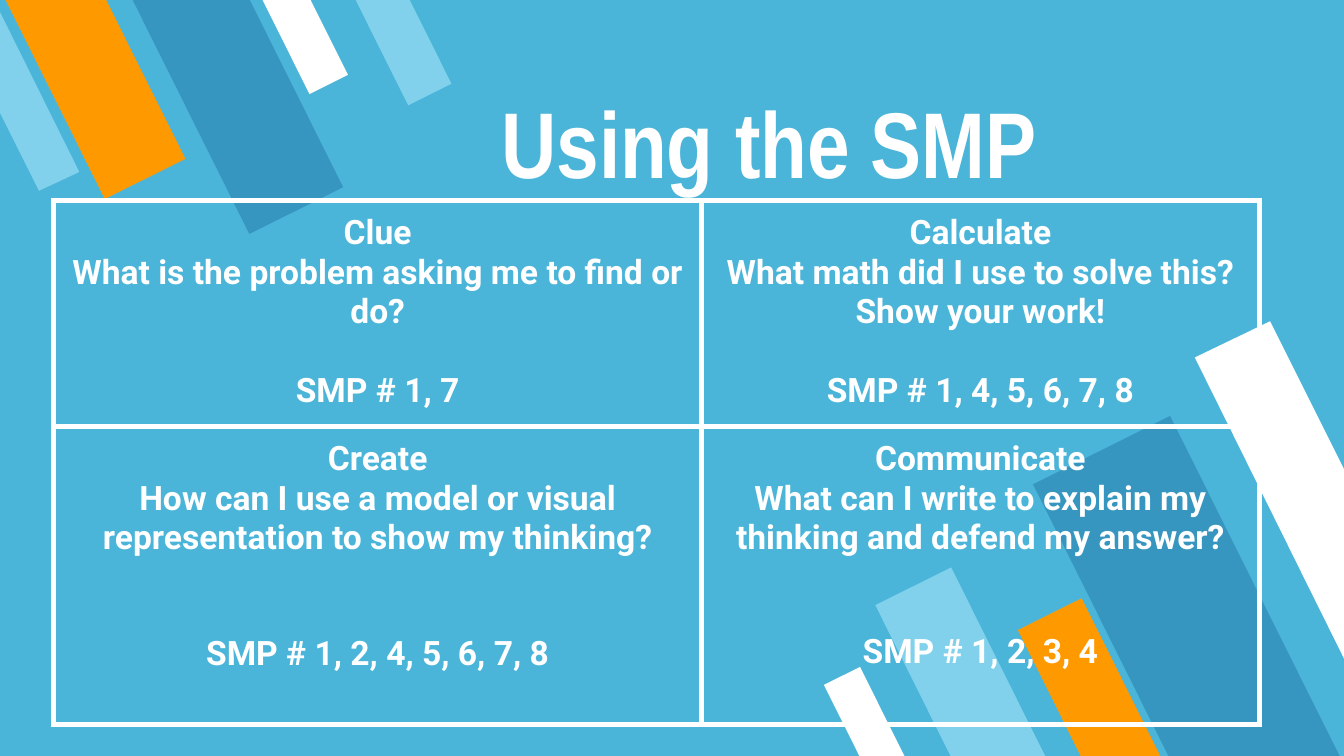
"""Build the "Using the SMP" slide with its four-part problem-solving table."""
from lxml.etree import SubElement
from pptx import Presentation
from pptx.dml.color import RGBColor
from pptx.enum.shapes import MSO_SHAPE
from pptx.enum.text import MSO_ANCHOR, MSO_AUTO_SIZE, PP_ALIGN
from pptx.oxml.ns import qn
from pptx.util import Inches, Pt

COLORS = {"sky": "4BB5D9", "light": "81D1EC", "deep": "3796BF", "orange": "FF9900", "white": "FFFFFF"}


def write(p, text, font="Roboto", size=18, align=PP_ALIGN.CENTER, before=0):
    p.alignment = align
    p.space_before = Pt(before)
    r = p.add_run()
    r.text = text
    r.font.name = font
    r.font.size = Pt(size)
    r.font.bold = True
    r.font.color.rgb = RGBColor.from_string(COLORS["white"])


def paint(sp, color):
    sp.shadow.inherit = False
    sp.fill.solid()
    sp.fill.fore_color.rgb = RGBColor.from_string(COLORS[color])
    sp.line.fill.background()


prs = Presentation()
prs.slide_width = Inches(10)
prs.slide_height = prs.slide_width * 9 // 16
s = prs.slides.add_slide(prs.slide_layouts[5])
s.background.fill.solid()
s.background.fill.fore_color.rgb = RGBColor.from_string(COLORS["sky"])

bars = [
    (6.83, 4.28, 0.63, 1.57, 153.5, "light"),
    (8.26, 3.2, 1.14, 2.84, 153.5, "deep"),
    (7.84, 4.5, 0.53, 1.32, 153.5, "orange"),
    (6.28, 4.99, 0.3, 0.74, 153.5, "white"),
    (2.11, -0.12, 0.32, 0.79, 333.5, "white"),
    (0.37, -0.26, 0.67, 1.68, 333.5, "orange"),
    (1.38, -0.28, 0.78, 1.95, 333.5, "deep"),
    (2.82, -0.14, 0.36, 0.89, 333.5, "light"),
]
for x, y, w, h, angle, color in bars:
    sp = s.shapes.add_shape(MSO_SHAPE.FLOWCHART_MANUAL_INPUT, Inches(x), Inches(y), Inches(w), Inches(h))
    sp.rotation = angle
    sp._element.spPr.find(qn("a:xfrm")).set("flipH", "1")
    paint(sp, color)

edge_bars = [
    ([(9.45, 2.39), (8.89, 2.66), (10, 4.9), (10, 3.49)], "white"),
    ([(0.29, 1.42), (0.59, 1.28), (0, 0.09), (0, 0.84)], "light"),
]
for corners, color in edge_bars:
    points = [(Inches(x), Inches(y)) for x, y in corners]
    outline = s.shapes.build_freeform(*points[0])
    outline.add_line_segments(points[1:])
    paint(outline.convert_to_shape(), color)

title = s.shapes.title
title.left, title.top, title.width, title.height = Inches(3.63), Inches(0.3), Inches(6.18), Inches(1.27)
tf = title.text_frame
tf.auto_size = MSO_AUTO_SIZE.NONE
tf.vertical_anchor = MSO_ANCHOR.BOTTOM
tf.margin_left = tf.margin_right = tf.margin_top = tf.margin_bottom = Inches(0.1)
write(tf.paragraphs[0], "Using the SMP", font="Arial Narrow", size=50, align=PP_ALIGN.LEFT)
s.shapes._spTree.append(title._element)

widths, heights = [4.82, 4.15], [1.68, 2.22]
steps = [
    [("Clue", "What is the problem asking me to find or do?", "SMP # 1, 7"),
     ("Calculate", "What math did I use to solve this? Show your work!", "SMP # 1, 4, 5, 6, 7, 8")],
    [("Create", "How can I use a model or visual representation to show my thinking?",
      "SMP # 1, 2, 4, 5, 6, 7, 8"),
     ("Communicate", "What can I write to explain my thinking and defend my answer?", "SMP # 1, 2, 3, 4")],
]
gaps = [[21, 21], [41, 40]]
table = s.shapes.add_table(2, 2, Inches(0.4), Inches(1.49), Inches(sum(widths)), Inches(sum(heights))).table
table.first_row = table.horz_banding = False
for column, width in zip(table.columns, widths):
    column.width = Inches(width)
for row, height, row_steps, row_gaps in zip(table.rows, heights, steps, gaps):
    row.height = Inches(height)
    for cell, (step, question, practices), gap in zip(row.cells, row_steps, row_gaps):
        cell.margin_left = cell.margin_right = cell.margin_top = cell.margin_bottom = Inches(0.1)
        cell.fill.background()
        tf = cell.text_frame
        write(tf.paragraphs[0], step)
        write(tf.add_paragraph(), question)
        write(tf.add_paragraph(), practices, before=gap)
        tcPr = cell._tc.get_or_add_tcPr()
        for n, side in enumerate(("a:lnL", "a:lnR", "a:lnT", "a:lnB")):
            ln = SubElement(tcPr, qn(side), w=str(Pt(3)))
            fill = SubElement(ln, qn("a:solidFill"))
            SubElement(fill, qn("a:srgbClr"), val=COLORS["white"])
            tcPr.insert(n, ln)

prs.save("out.pptx")
